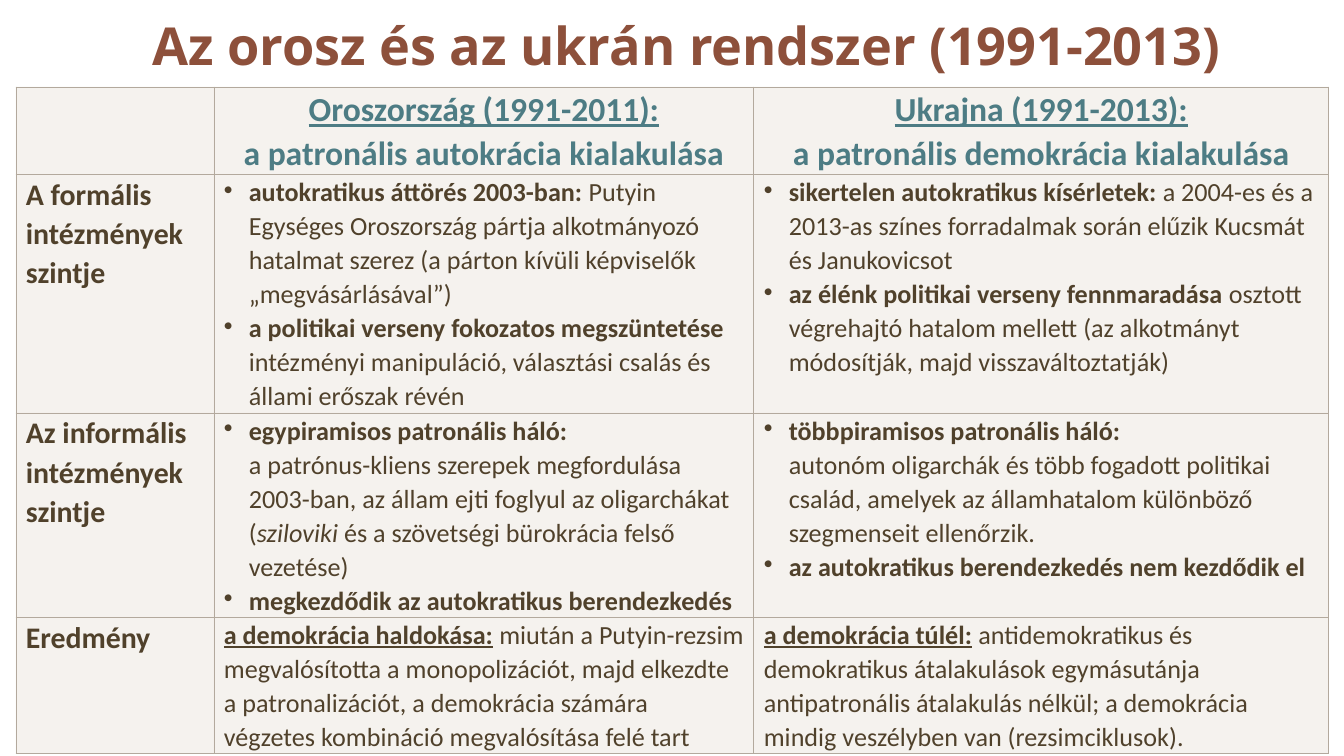
import pptx
import pptx.dml.color
import pptx.enum.text
import pptx.oxml
import pptx.oxml.ns
import pptx.util

PX = 914400 / 134.4
COLORS = {"title": "8D503B", "heading": "4D7C84", "text": "50412B",
          "cell": "EFEAE4", "border": "B3A99D"}
NAMESPACE = pptx.oxml.ns.nsdecls("a")
ALIGN = pptx.enum.text.PP_ALIGN
ANCHOR = pptx.enum.text.MSO_ANCHOR


def px(length):
    return pptx.util.Emu(round(length * PX))


def assign(target, values):
    for name, value in values.items():
        setattr(target, name, value)


class SlideBuilder:
    """Holds the style and the current slide."""

    def __init__(self, presentation):
        self.slide = presentation.slides.add_slide(presentation.slide_layouts[6])
        self.styles = {
            "title": {"name": "Open Sans", "size": pptx.util.Pt(28)},
            "heading": {"name": "Calibri", "size": pptx.util.Pt(18)},
            "label": {"name": "Calibri", "size": pptx.util.Pt(16)},
            "text": {"name": "Calibri", "size": pptx.util.Pt(14)},
        }

    def paragraph(self, paragraph, runs, style, bullet=False):
        """Runs are (text, flags) pairs; flags are b, i and u."""
        if bullet:
            properties = paragraph._p.get_or_add_pPr()
            indent = px(25)
            properties.set("marL", str(indent))
            properties.set("indent", str(-indent))
            properties.append(pptx.oxml.parse_xml(f'<a:buChar {NAMESPACE} char="•"/>'))
        centered = style in ("title", "heading")
        paragraph.alignment = ALIGN.CENTER if centered else ALIGN.LEFT
        if style != "title":
            paragraph.line_spacing = 1.07
        for text, flags in runs:
            for index, line in enumerate(text.split("\n")):
                if index:
                    paragraph.add_line_break()
                if not line:
                    continue
                run = paragraph.add_run()
                run.text = line
                assign(run.font, {**self.styles[style], "bold": "b" in flags,
                                  "italic": "i" in flags, "underline": "u" in flags})
                color = COLORS.get(style, COLORS["text"])
                run.font.color.rgb = pptx.dml.color.RGBColor.from_string(color)

    def title(self, text, left, top, width, height):
        frame = self.slide.shapes.add_textbox(px(left), px(top), px(width), px(height)).text_frame
        assign(frame, {"word_wrap": True, "vertical_anchor": ANCHOR.MIDDLE})
        self.paragraph(frame.paragraphs[0], [(text, "b")], "title")

    def cell(self, cell, paragraphs, style, bullet):
        assign(cell, {"margin_left": px(10), "margin_right": px(10),
                      "margin_top": 0, "margin_bottom": 0})
        frame = cell.text_frame
        for index, runs in enumerate(paragraphs):
            paragraph = frame.add_paragraph() if index else frame.paragraphs[0]
            self.paragraph(paragraph, runs, style, bullet)

        # Borders come before the fill
        properties = cell._tc.get_or_add_tcPr()
        for side in "LRTB":
            properties.append(pptx.oxml.parse_xml(
                f'<a:ln{side} {NAMESPACE} w="6350"><a:solidFill>'
                f'<a:srgbClr val="{COLORS["border"]}"/></a:solidFill></a:ln{side}>'))
        cell.fill.solid()
        cell.fill.fore_color.rgb = pptx.dml.color.RGBColor.from_string(COLORS["cell"])
        color = properties.find(pptx.oxml.ns.qn("a:solidFill"))[0]
        color.append(pptx.oxml.parse_xml(f'<a:alpha {NAMESPACE} val="60000"/>'))

    def table(self, content, left, top, widths, heights, frame_height):
        shape = self.slide.shapes.add_table(len(heights), len(widths), px(left), px(top),
                                            px(sum(widths)), px(sum(heights)))
        table = shape.table
        assign(table, {"first_row": False, "horz_banding": False})
        for column, width in zip(table.columns, widths):
            column.width = px(width)
        for row, height in zip(table.rows, heights):
            row.height = px(height)
        shape.height = px(frame_height)
        for row, cells in enumerate(content):
            for column, paragraphs in enumerate(cells):
                style = "heading" if row == 0 else "label" if column == 0 else "text"
                bullet = style == "text" and len(paragraphs) > 1
                self.cell(table.cell(row, column), paragraphs, style, bullet)


# Each cell is a list of paragraphs, each paragraph a list of runs
CONTENT = [
    [
        [],
        [[("Oroszország (1991-2011):\n", "bu"), ("a patronális autokrácia kialakulása", "b")]],
        [[("Ukrajna (1991-2013):\n", "bu"), ("a patronális demokrácia kialakulása", "b")]],
    ],
    [
        [[("A formális intézmények szintje", "b")]],
        [[("autokratikus áttörés 2003-ban: ", "b"),
          ("Putyin Egységes Oroszország pártja alkotmányozó hatalmat szerez "
           "(a párton kívüli képviselők „megvásárlásával”)", "")],
         [("a politikai verseny fokozatos megszüntetése ", "b"),
          ("intézményi manipuláció, választási csalás és állami erőszak révén", "")]],
        [[("sikertelen autokratikus kísérletek: ", "b"),
          ("a 2004-es és a 2013-as színes forradalmak során elűzik Kucsmát "
           "és Janukovicsot", "")],
         [("az élénk politikai verseny fennmaradása ", "b"),
          ("osztott végrehajtó hatalom mellett (az alkotmányt módosítják, "
           "majd visszaváltoztatják)", "")]],
    ],
    [
        [[("Az informális intézmények szintje", "b")]],
        [[("egypiramisos patronális háló:\n", "b"),
          ("a patrónus-kliens szerepek megfordulása 2003-ban, "
           "az állam ejti foglyul az oligarchákat (", ""),
          ("sziloviki ", "i"), ("és a szövetségi bürokrácia felső vezetése)", "")],
         [("megkezdődik az autokratikus berendezkedés", "b")]],
        [[("többpiramisos patronális háló:\n", "b"),
          ("autonóm oligarchák és több fogadott politikai család, "
           "amelyek az államhatalom különböző szegmenseit ellenőrzik.", "")],
         [("az autokratikus berendezkedés nem kezdődik el", "b")]],
    ],
    [
        [[("Eredmény", "b")]],
        [[("a demokrácia haldokása:", "bu"), (" ", "b"),
          ("miután a Putyin-rezsim megvalósította a monopolizációt, majd elkezdte "
           "a patronalizációt, a demokrácia számára végzetes kombináció "
           "megvalósítása felé tart", "")]],
        [[("a demokrácia túlél:", "bu"), (" ", "b"),
          ("antidemokratikus és demokratikus átalakulások egymásutánja "
           "antipatronális átalakulás nélkül; a demokrácia mindig veszélyben van "
           "(rezsimciklusok).", "")]],
    ],
]


def main():
    presentation = pptx.Presentation()
    assign(presentation, {"slide_width": px(1344), "slide_height": px(756)})
    builder = SlideBuilder(presentation)

    # Comparison table; rows grow to fit their text
    builder.table(CONTENT, 16, 87, [198, 540, 575], [63, 175, 150, 116], 650)

    # Title
    builder.title("Az orosz és az ukrán rendszer (1991-2013)", 30, 19, 1312, 52)

    presentation.save("out.pptx")


if __name__ == "__main__":
    main()
